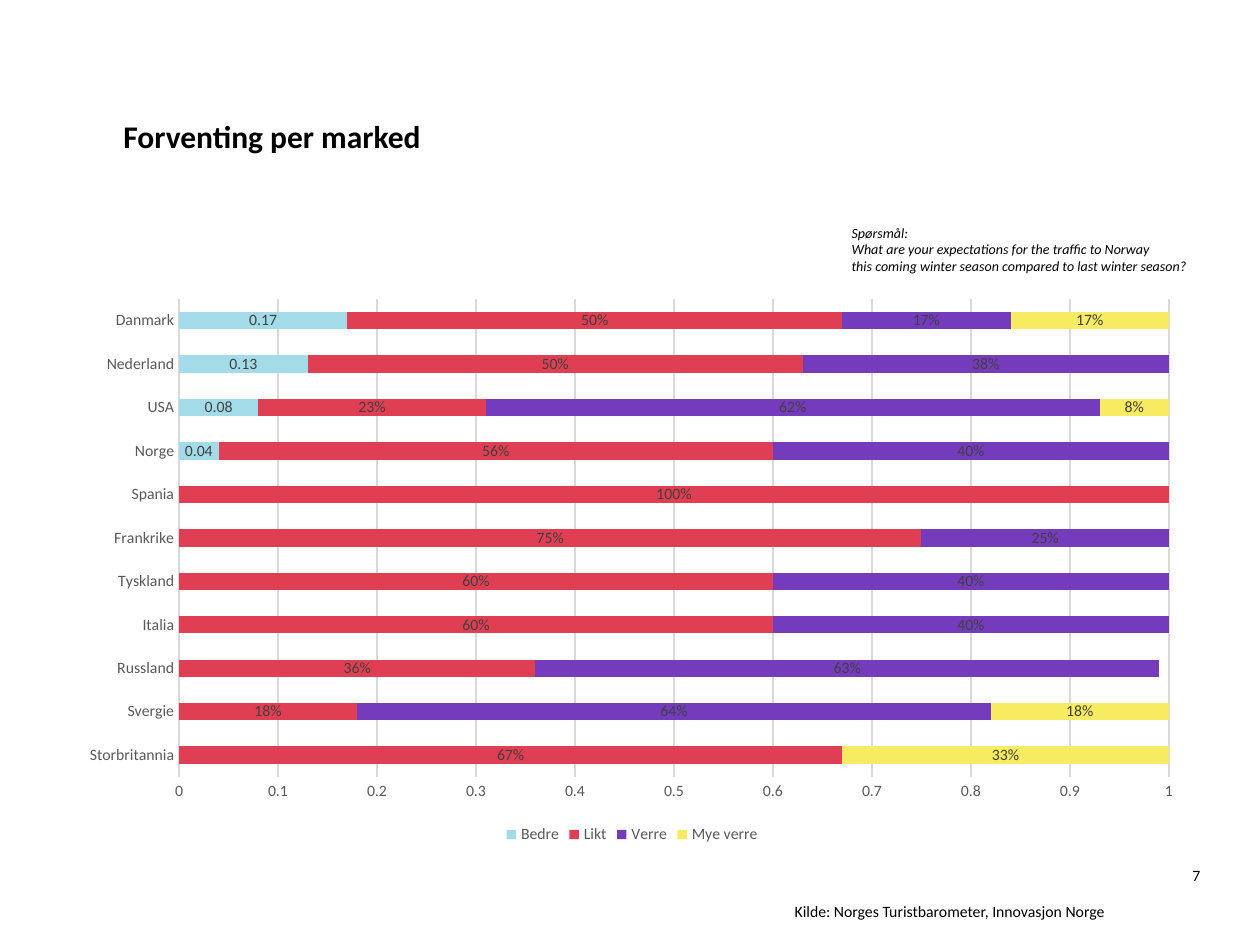
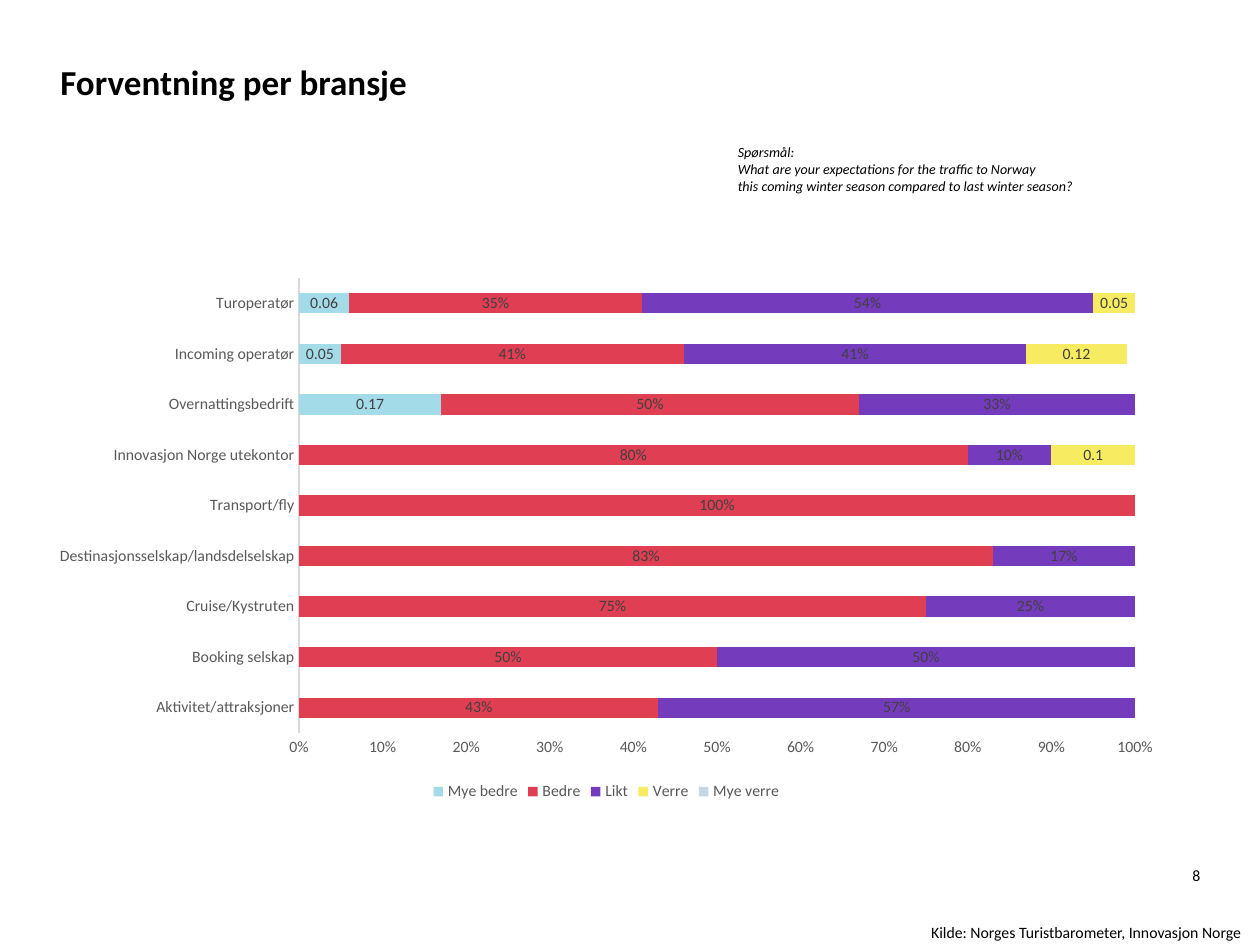
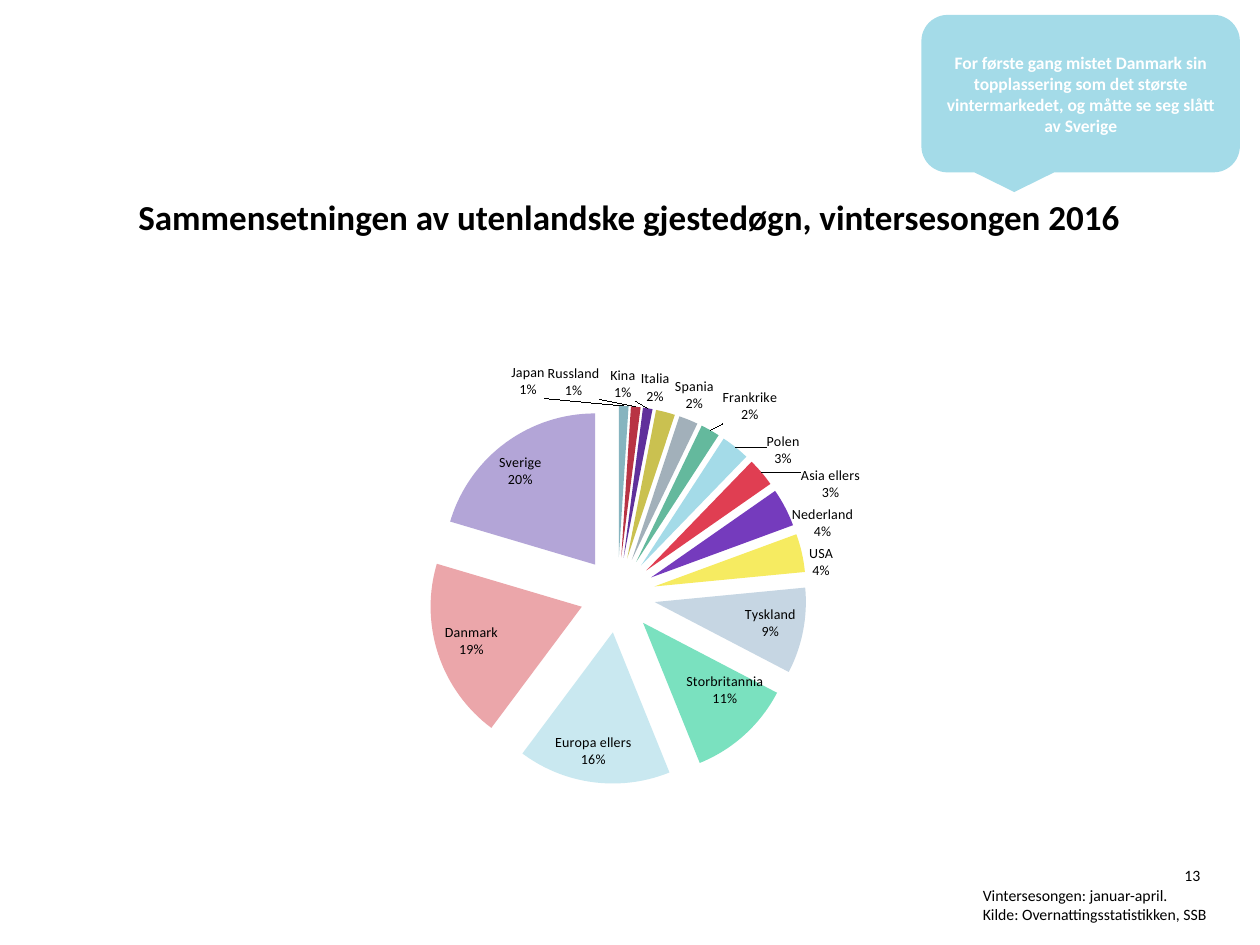
from lxml import etree
from pptx import Presentation
from pptx import util as u
from pptx.chart import data as chart_data
from pptx.dml.color import RGBColor
from pptx.enum import chart as c
from pptx.enum import shapes, text
from pptx.oxml import ns

FONT = "Calibri"
BLACK = RGBColor(0x00, 0x00, 0x00)
WHITE = RGBColor(0xFF, 0xFF, 0xFF)
AXIS_GREY = RGBColor(0x59, 0x59, 0x59)
LABEL_GREY = RGBColor(0x40, 0x40, 0x40)
LINE_GREY = RGBColor(0xD9, 0xD9, 0xD9)
LIGHT_BLUE = RGBColor(0xA4, 0xDB, 0xE8)
RED = RGBColor(0xE0, 0x3E, 0x52)
PURPLE = RGBColor(0x75, 0x3B, 0xBD)
YELLOW = RGBColor(0xF6, 0xEB, 0x61)
PALE_BLUE = RGBColor(0xC6, 0xD6, 0xE3)
MINT = RGBColor(0x7A, 0xE1, 0xBF)
ACCENTS = [LIGHT_BLUE, RED, PURPLE, YELLOW, PALE_BLUE, MINT]
DARK_ACCENTS = [RGBColor.from_string(code) for code in
                ("86B4BF", "B83344", "60309B", "CAC150", "A2B0BA", "64B99D")]
LIGHT_ACCENTS = [RGBColor.from_string(code) for code in
                 ("C9E8F0", "EBA6AA", "B3A5D7")]

QUESTION = ["Spørsmål:",
            "What are your expectations for the traffic to Norway",
            "this coming winter season compared to last winter season?"]
BAROMETER = "Kilde: Norges Turistbarometer, Innovasjon Norge"


def format_font(font, size, color=BLACK, bold=False, italic=False):
    font.name = FONT
    font.size = u.Pt(size)
    font.bold = bold
    font.italic = italic
    font.color.rgb = color


def write(frame, lines, align=text.PP_ALIGN.LEFT, anchor=text.MSO_ANCHOR.TOP,
          margins=True, wrap=True, **font_format):
    frame.word_wrap = wrap
    frame.auto_size = text.MSO_AUTO_SIZE.NONE
    frame.vertical_anchor = anchor
    if not margins:
        frame.margin_left = frame.margin_right = 0
        frame.margin_top = frame.margin_bottom = 0
    for index, line in enumerate(lines):
        paragraph = frame.add_paragraph() if index else frame.paragraphs[0]
        paragraph.alignment = align
        run = paragraph.add_run()
        run.text = line
        format_font(run.font, **font_format)


def points(box):
    return [u.Pt(length) for length in box]


def chart_element(parent, name, value):
    child = etree.SubElement(parent, ns.qn(f"c:{name}"))
    child.set("val", str(value))
    return child


class Deck:
    def __init__(self):
        self.presentation = Presentation()
        self.presentation.slide_width = u.Pt(720)
        self.presentation.slide_height = u.Pt(540)
        self.slide = None

    def new_slide(self, title, box, number, size=20):
        self.slide = self.presentation.slides.add_slide(self.presentation.slide_layouts[5])
        shape = self.slide.shapes.title
        shape.left, shape.top, shape.width, shape.height = points(box)
        write(shape.text_frame, [title], size=size, bold=True, margins=False)
        self.text_box([number], (658, 494.5, 28, 11), size=9,
                      align=text.PP_ALIGN.RIGHT, margins=False)

    def text_box(self, lines, box, **text_format):
        shape = self.slide.shapes.add_textbox(*points(box))
        write(shape.text_frame, lines, **text_format)

    def source(self, lines, box):
        self.text_box(lines, box, size=9, wrap=False)

    def question(self, left, top):
        self.text_box(QUESTION, (left, top, 209.5, 36), size=8, italic=True, wrap=False)

    def callout(self, line, box):
        shape = self.slide.shapes.add_shape(
            shapes.MSO_SHAPE.ROUNDED_RECTANGULAR_CALLOUT, *points(box))
        shape.shadow.inherit = False
        shape.fill.solid()
        shape.fill.fore_color.rgb = LIGHT_BLUE
        shape.line.fill.background()
        write(shape.text_frame, [line], size=10, color=WHITE, bold=True,
              align=text.PP_ALIGN.CENTER, anchor=text.MSO_ANCHOR.MIDDLE)

    def chart(self, kind, categories, series_values, box, plot_box):
        data = chart_data.CategoryChartData()
        data.categories = categories
        for name, values in series_values.items():
            data.add_series(name, values)
        chart = self.slide.shapes.add_chart(kind, *points(box), data).chart
        format_font(chart.font, 10)
        chart.has_title = False
        self.place_plot(chart, box, plot_box)
        return chart

    def place_plot(self, chart, box, plot_box):
        plot_area = chart.element.find(".//" + ns.qn("c:plotArea"))
        for old_layout in plot_area.findall(ns.qn("c:layout")):
            plot_area.remove(old_layout)
        layout = etree.Element(ns.qn("c:layout"))
        plot_area.insert(0, layout)
        manual = etree.SubElement(layout, ns.qn("c:manualLayout"))
        left, top, width, height = box
        plot_left, plot_top, plot_width, plot_height = plot_box
        chart_element(manual, "layoutTarget", "inner")
        chart_element(manual, "xMode", "edge")
        chart_element(manual, "yMode", "edge")
        chart_element(manual, "x", (plot_left - left) / width)
        chart_element(manual, "y", (plot_top - top) / height)
        chart_element(manual, "w", plot_width / width)
        chart_element(manual, "h", plot_height / height)

    def stacked_bars(self, categories, series_values, box, plot_box,
                     plain_labels, axis_format="General", grid=False):
        chart = self.chart(c.XL_CHART_TYPE.BAR_STACKED, categories,
                           series_values, box, plot_box)
        plot = chart.plots[0]
        plot.gap_width = 150
        plot.overlap = 100
        plot.vary_by_categories = False
        for series, color in zip(plot.series, ACCENTS):
            series.format.fill.solid()
            series.format.fill.fore_color.rgb = color
            labels = series.data_labels
            labels.show_value = True
            labels.number_format = "General" if series.name in plain_labels else "0%"
            labels.number_format_is_linked = False
            format_font(labels.font, 9, LABEL_GREY)
        for axis in (chart.category_axis, chart.value_axis):
            axis.major_tick_mark = axis.minor_tick_mark = c.XL_TICK_MARK.NONE
            format_font(axis.tick_labels.font, 9, AXIS_GREY)
        lines = [chart.category_axis.format.line]
        value_axis = chart.value_axis
        value_axis.minimum_scale = 0
        value_axis.maximum_scale = 1
        value_axis.major_unit = 0.1
        value_axis.tick_labels.number_format = axis_format
        value_axis.tick_labels.number_format_is_linked = False
        value_axis.format.line.fill.background()
        value_axis.has_major_gridlines = grid
        if grid:
            lines.append(value_axis.major_gridlines.format.line)
        for line in lines:
            line.color.rgb = LINE_GREY
            line.width = u.Pt(0.75)
        chart.has_legend = True
        chart.legend.position = c.XL_LEGEND_POSITION.BOTTOM
        chart.legend.include_in_layout = False
        format_font(chart.legend.font, 9, AXIS_GREY)

    def exploded_pie(self, shares, box, plot_box, colors):
        chart = self.chart(c.XL_CHART_TYPE.PIE, list(shares),
                           {"Series 1": list(shares.values())}, box, plot_box)
        chart.has_legend = False
        plot = chart.plots[0]
        plot.vary_by_categories = True
        series = plot.series[0]
        labels = series.data_labels
        labels.show_value = False
        labels.show_category_name = True
        labels.show_percentage = True
        labels.number_format = "0%"
        labels.number_format_is_linked = False
        labels.position = c.XL_LABEL_POSITION.BEST_FIT
        format_font(labels.font, 8)
        separator = etree.Element(ns.qn("c:separator"))
        separator.text = "\n"
        series_element = chart.element.find(".//" + ns.qn("c:ser"))
        percent = series_element.find(".//" + ns.qn("c:showPercent"))
        bubble = percent.getparent().find(ns.qn("c:showBubbleSize"))
        (percent if bubble is None else bubble).addnext(separator)
        for index, color in enumerate(colors):
            fill = series.points[index].format.fill
            fill.solid()
            fill.fore_color.rgb = color
        explosion = etree.Element(ns.qn("c:explosion"))
        explosion.set("val", "25")
        series_element.find(ns.qn("c:dPt")).addprevious(explosion)


def market_slide(deck):
    deck.new_slide("Forventing per marked", (70.5, 67, 604, 51), "7", size=18)
    deck.source([BAROMETER], (447, 512, 197.5, 18))
    deck.question(479.5, 124.5)
    markets = ["Storbritannia", "Svergie", "Russland", "Italia", "Tyskland",
               "Frankrike", "Spania", "Norge", "USA", "Nederland", "Danmark"]
    expectations = {
        "Bedre": [None] * 7 + [0.04, 0.08, 0.13, 0.17],
        "Likt": [0.67, 0.18, 0.36, 0.6, 0.6, 0.75, 1, 0.56, 0.23, 0.5, 0.5],
        "Verre": [None, 0.64, 0.63, 0.4, 0.4, 0.25, None, 0.4, 0.62, 0.38, 0.17],
        "Mye verre": [0.33, 0.18] + [None] * 6 + [0.08, None, 0.17],
    }
    deck.stacked_bars(markets, expectations, (39, 164, 644.5, 321),
                      (102.3, 170.8, 565.7, 273.2), ["Bedre"], grid=True)


def industry_slide(deck):
    deck.new_slide("Forventning per bransje", (34.5, 34.5, 652, 24.5), "8")
    deck.source([BAROMETER], (525, 524, 195, 30))
    industries = ["Aktivitet/attraksjoner", "Booking selskap", "Cruise/Kystruten",
                  "Destinasjonsselskap/landsdelselskap", "Transport/fly",
                  "Innovasjon Norge utekontor", "Overnattingsbedrift",
                  "Incoming operatør", "Turoperatør"]
    expectations = {
        "Mye bedre": [None] * 6 + [0.17, 0.05, 0.06],
        "Bedre": [0.43, 0.5, 0.75, 0.83, 1, 0.8, 0.5, 0.41, 0.35],
        "Likt": [0.57, 0.5, 0.25, 0.17, None, 0.1, 0.33, 0.41, 0.54],
        "Verre": [None] * 5 + [0.1, None, 0.12, 0.05],
        "Mye verre": [None] * 9,
    }
    deck.stacked_bars(industries, expectations, (21, 152.5, 651, 308),
                      (170.9, 158.9, 477.7, 260), ["Mye bedre", "Verre"],
                      axis_format="0%")
    deck.question(414.5, 78.5)


def guest_nights_slide(deck):
    deck.new_slide("Sammensetningen av utenlandske gjestedøgn, vintersesongen 2016",
                   (79, 111.5, 604, 24.5), "13")
    deck.source(["Vintersesongen: januar-april.", "Kilde: Overnattingsstatistikken, SSB"],
                (554.5, 502.5, 145, 29))
    shares = {"Japan": 1, "Russland": 1, "Kina": 1, "Italia": 2, "Spania": 2,
              "Frankrike": 2, "Polen": 3, "Asia ellers": 3, "Nederland": 4,
              "USA": 4, "Tyskland": 9, "Storbritannia": 11, "Europa ellers": 16,
              "Danmark": 19, "Sverige": 20}
    deck.exploded_pie(shares, (66, 196, 604, 283.5), (245, 232, 216, 216),
                      DARK_ACCENTS + ACCENTS + LIGHT_ACCENTS)
    deck.callout("For første gang mistet Danmark sin topplassering som det største "
                 "vintermarkedet, og måtte se seg slått av Sverige",
                 (526.5, 8.5, 182, 90))


def main():
    deck = Deck()
    market_slide(deck)
    industry_slide(deck)
    guest_nights_slide(deck)
    deck.presentation.save("out.pptx")


if __name__ == "__main__":
    main()
